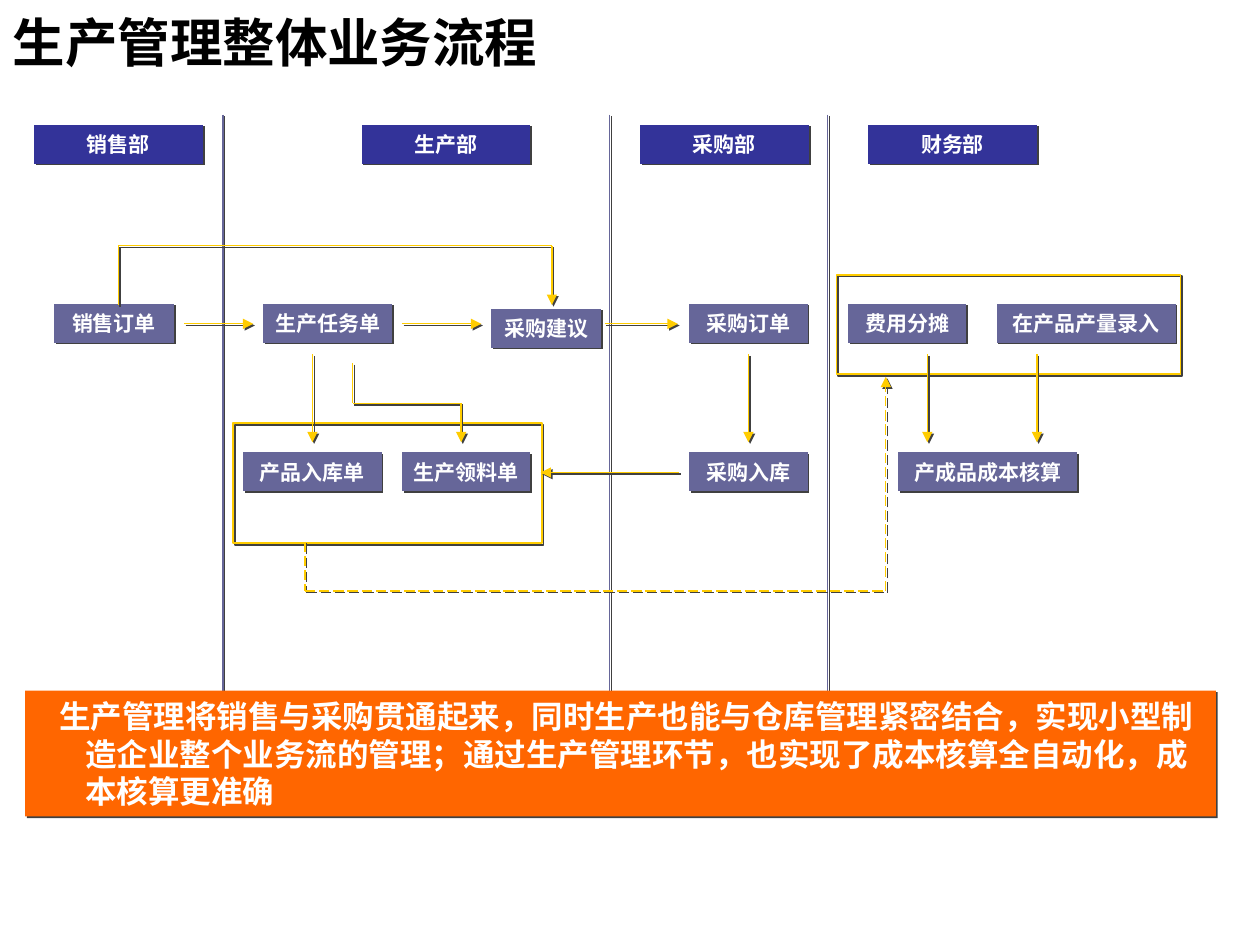
from itertools import pairwise

from lxml import etree
from pptx import Presentation
from pptx import util as u
from pptx.dml.color import RGBColor
from pptx.enum import dml, shapes, text
from pptx.oxml import ns

FONT = "Noto Sans CJK SC"
BLACK = RGBColor(0x00, 0x00, 0x00)
WHITE = RGBColor(0xFF, 0xFF, 0xFF)
NAVY = RGBColor(0x33, 0x33, 0x99)
SLATE = RGBColor(0x66, 0x66, 0x99)
GOLD = RGBColor(0xFF, 0xCC, 0x00)
ORANGE = RGBColor(0xFF, 0x66, 0x00)
SHADOW = RGBColor(0x40, 0x40, 0x40)

WIDTH, HEIGHT = u.Inches(10), u.Inches(7.5)
COLUMN, ROW = WIDTH / 100, HEIGHT / 100

HEADER_ROW, ORDER_ROW, RECEIPT_ROW = 13.2, 32.13, 47.87
BOX_ROWS, HEADER_COLUMNS = 4.13, 13.4
FLOW_ROW, DROP_START, DROP_END = 34.27, 37.47, 46.8
DIVIDER_TOP, DIVIDER_BOTTOM = 12.13, 81.47

DEPARTMENTS = [("销售部", 2.7), ("生产部", 28.7), ("采购部", 50.8), ("财务部", 68.9)]
DIVIDERS = [17.7, 48.4, 65.7]
DOCUMENTS = [
    ("销售订单", 4.3, ORDER_ROW, 9.5),
    ("生产任务单", 20.9, ORDER_ROW, 10.2),
    ("采购建议", 39, 32.67, 8.7),
    ("采购订单", 54.7, ORDER_ROW, 9.4),
    ("费用分摊", 67.3, ORDER_ROW, 9.4),
    ("在产品产量录入", 79.1, ORDER_ROW, 14.2),
    ("产品入库单", 19.3, RECEIPT_ROW, 11),
    ("生产领料单", 31.9, RECEIPT_ROW, 10.2),
    ("采购入库", 54.7, RECEIPT_ROW, 9.4),
    ("产成品成本核算", 71.3, RECEIPT_ROW, 14.2),
]
STOCK_FRAME = (18.5, 44.8, 24.5, 12.67)
COST_FRAME = (66.4, 29.07, 27.3, 10.53)
FLOWS = [(14.6, 20.1), (31.9, 38.2), (48, 53.8)]
DROPS = [24.8, 59.4, 73.6, 82.3]
SALES_TO_ADVICE = [(9.4, 32.27), (9.4, 26), (43.8, 26), (43.8, 32.27)]
TASK_TO_MATERIAL = [(28, 38.4), (28, 42.67), (36.6, 42.67), (36.6, DROP_END)]
RECEIPT_TO_STOCK = [(53.9, 50), (42.9, 50)]
STOCK_TO_COST = [(24.2, 57.33), (24.2, 62.53), (70.3, 62.53), (70.3, 39.87)]
SUMMARY = (
    "生产管理将销售与采购贯通起来，同时生产也能与仓库管理紧密结合，"
    "实现小型制造企业整个业务流的管理；通过生产管理环节，"
    "也实现了成本核算全自动化，成本核算更准确"
)


def place(column, row, columns, rows):
    return [round(n) for n in (column * COLUMN, row * ROW, columns * COLUMN, rows * ROW)]


def child(parent, tag, **attributes):
    return etree.SubElement(parent, ns.qn(tag), **attributes)


def cast_shadow(effects):
    outer = child(effects, "a:outerShdw", dist=str(u.Pt(1.4)), dir="2700000",
                  algn="ctr", rotWithShape="0")
    child(outer, "a:srgbClr", val=str(SHADOW))


def write(frame, wording, size=12, color=WHITE, align=text.PP_ALIGN.CENTER,
          anchor=text.MSO_ANCHOR.MIDDLE, wrap=False, margin=0, indent=0):
    frame.word_wrap = wrap
    frame.vertical_anchor = anchor
    paragraph = frame.paragraphs[0]
    paragraph.alignment = align
    properties = paragraph._p.get_or_add_pPr()
    properties.set("marL", str(u.Inches(margin)))
    properties.set("indent", str(u.Inches(indent)))
    run = paragraph.add_run()
    run.text = wording
    run.font.size = u.Pt(size)
    run.font.bold = True
    run.font.color.rgb = color
    run.font.name = FONT
    child(run._r.get_or_add_rPr(), "a:ea", typeface=FONT)


def add_panel(slide, area, fill=None, kind=shapes.MSO_SHAPE.RECTANGLE):
    panel = slide.shapes.add_shape(kind, *place(*area))
    panel.shadow.inherit = False
    cast_shadow(panel._element.spPr.find(ns.qn("a:effectLst")))
    if fill is None:
        panel.fill.background()
        panel.line.color.rgb = GOLD
        panel.line.width = u.Pt(1)
    else:
        panel.fill.solid()
        panel.fill.fore_color.rgb = fill
        panel.line.fill.background()
    return panel


def add_box(slide, wording, column, row, columns, fill):
    box = add_panel(slide, (column, row, columns, BOX_ROWS), fill,
                    shapes.MSO_SHAPE.FLOWCHART_PROCESS)
    write(box.text_frame, wording)


def add_route(slide, points, color=GOLD, width=0.75, arrow=True, dashed=False):
    for start, end in pairwise(points):
        segment = slide.shapes.add_connector(
            shapes.MSO_CONNECTOR.STRAIGHT, *place(*start, *end))
        segment.line.color.rgb = color
        segment.line.width = u.Pt(width)
        if dashed:
            segment.line.dash_style = dml.MSO_LINE.LONG_DASH
        if arrow and end == points[-1]:
            child(segment.line._get_or_add_ln(), "a:tailEnd", type="triangle")
        cast_shadow(child(segment._element.spPr, "a:effectLst"))


def add_title(slide, wording):
    title = slide.shapes.title
    title.left, title.top, title.width, title.height = place(0, 0, 94.9, 8.8)
    write(title.text_frame, wording, size=30, color=BLACK,
          align=text.PP_ALIGN.LEFT, wrap=True)


def add_summary(slide):
    banner = add_panel(slide, (2, 73.07, 94.5, 13.33), ORANGE)
    write(banner.text_frame, SUMMARY, size=18, align=text.PP_ALIGN.LEFT,
          anchor=text.MSO_ANCHOR.TOP, wrap=True, margin=0.38, indent=-0.21)


def main():
    deck = Presentation()
    deck.slide_width, deck.slide_height = WIDTH, HEIGHT
    slide = deck.slides.add_slide(deck.slide_layouts[5])
    add_title(slide, "生产管理整体业务流程")

    for column in DIVIDERS:
        add_route(slide, [(column, DIVIDER_TOP), (column, DIVIDER_BOTTOM)],
                  color=SLATE, arrow=False)
    for department, column in DEPARTMENTS:
        add_box(slide, department, column, HEADER_ROW, HEADER_COLUMNS, NAVY)
    for document, column, row, columns in DOCUMENTS:
        add_box(slide, document, column, row, columns, SLATE)
    add_summary(slide)
    for frame in (STOCK_FRAME, COST_FRAME):
        add_panel(slide, frame)

    for start, end in FLOWS:
        add_route(slide, [(start, FLOW_ROW), (end, FLOW_ROW)])
    for column in DROPS:
        add_route(slide, [(column, DROP_START), (column, DROP_END)])
    add_route(slide, SALES_TO_ADVICE)
    add_route(slide, TASK_TO_MATERIAL)
    add_route(slide, RECEIPT_TO_STOCK, width=1)
    add_route(slide, STOCK_TO_COST, dashed=True)

    deck.save("out.pptx")


if __name__ == "__main__":
    main()
